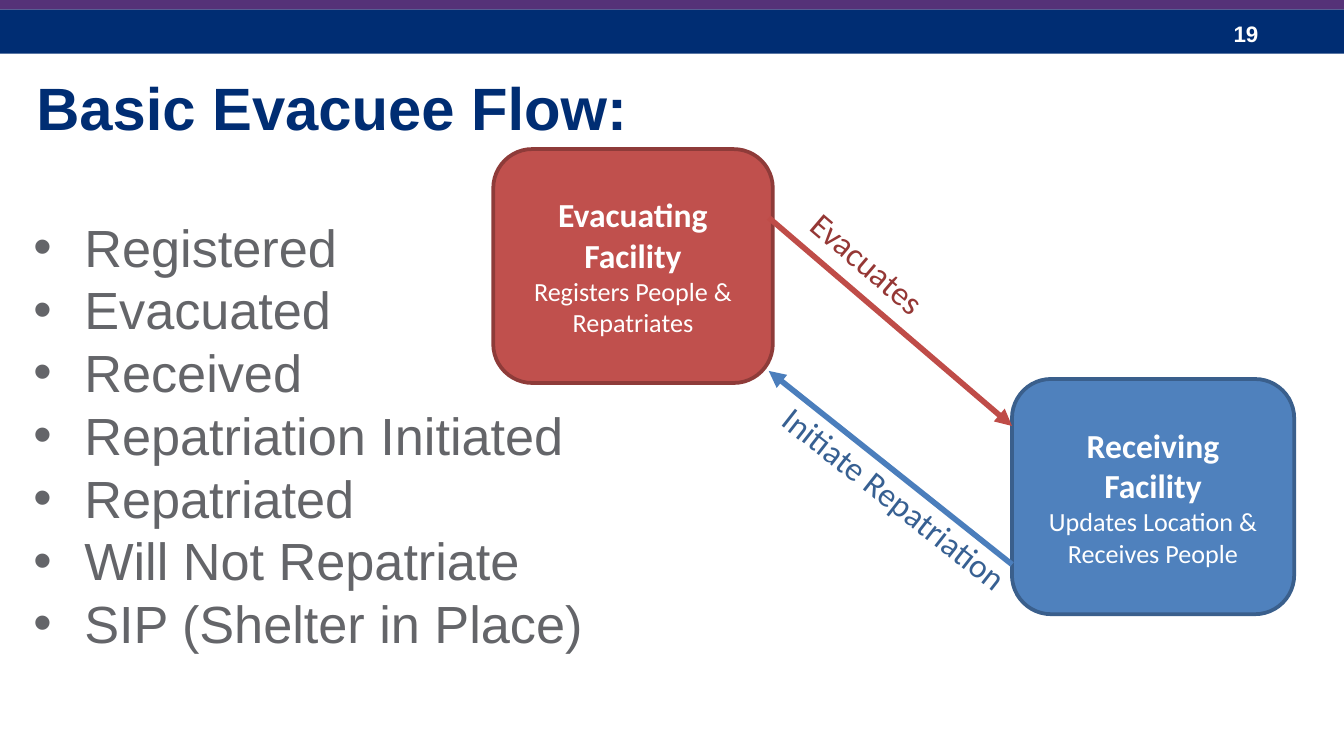
from dataclasses import dataclass

import pptx
import pptx.dml.color
import pptx.enum.shapes
import pptx.enum.text
import pptx.oxml.ns
import pptx.util
from lxml import etree

Inches = pptx.util.Inches
Pt = pptx.util.Pt
RGB = pptx.dml.color.RGBColor
Shape = pptx.enum.shapes.MSO_SHAPE
Align = pptx.enum.text.PP_ALIGN
Anchor = pptx.enum.text.MSO_ANCHOR
qn = pptx.oxml.ns.qn

NAVY = RGB(0x00, 0x2D, 0x73)
PURPLE = RGB(0x55, 0x32, 0x78)
GRAY = RGB(0x64, 0x65, 0x69)
WHITE = RGB(0xFF, 0xFF, 0xFF)
RED = RGB(0xC0, 0x50, 0x4D)
RED_EDGE = RGB(0x8E, 0x3B, 0x39)
RED_LINE = RGB(0xBF, 0x4C, 0x48)
RED_TEXT = RGB(0x95, 0x37, 0x35)
BLUE = RGB(0x4F, 0x81, 0xBD)
BLUE_EDGE = RGB(0x3A, 0x5F, 0x8C)
BLUE_LINE = RGB(0x4B, 0x7E, 0xBC)
BLUE_TEXT = RGB(0x37, 0x60, 0x92)

Box = tuple[float, float, float, float]
Point = tuple[float, float]


@dataclass
class Place:
    box: Box
    name: list[str]
    role: str
    fill: RGB
    edge: RGB


@dataclass
class Move:
    start: Point
    end: Point
    color: RGB
    label: str
    box: Box
    turn: float
    ink: RGB


STATES = [
    "Registered", "Evacuated", "Received", "Repatriation Initiated",
    "Repatriated", "Will Not Repatriate", "SIP (Shelter in Place)",
]
PLACES = [
    Place((3.67, 1.11, 2.08, 1.74), ["Evacuating", "Facility"],
          "Registers People & Repatriates", RED, RED_EDGE),
    Place((7.53, 2.82, 2.1, 1.75), ["Receiving Facility"],
          "Updates Location & Receives People", BLUE, BLUE_EDGE),
]
MOVES = [
    Move((5.72, 1.62), (7.53, 3.17), RED_LINE, "Evacuates",
         (5.83, 1.83, 1.43, 0.4), 40.5, RED_TEXT),
    Move((7.53, 4.2), (5.72, 2.76), BLUE_LINE, "Initiate Repatriation",
         (5.53, 3.56, 2.39, 0.4), 38.1, BLUE_TEXT),
]


def style(font, face: str, size: float, color: RGB, bold: bool = False) -> None:
    font.name, font.size, font.bold = face, Pt(size), bold
    font.color.rgb = color


def add_text(slide, box: Box, lines: list[str]):
    shape = slide.shapes.add_textbox(*map(Inches, box))
    frame = shape.text_frame
    frame.word_wrap = True
    frame.text = "\n".join(lines)
    return shape


def add_block(slide, kind, box: Box, fill: RGB):
    shape = slide.shapes.add_shape(kind, *map(Inches, box))
    shape.shadow.inherit = False
    shape.fill.solid()
    shape.fill.fore_color.rgb = fill
    shape.line.fill.background()
    return shape


def add_title(slide, text: str) -> None:
    title = slide.shapes.title
    title.left, title.top, title.width, title.height = map(
        Inches, (0.17, 0.48, 9.5, 1.18))
    frame = title.text_frame
    frame.text = text
    frame.vertical_anchor = Anchor.TOP
    para = frame.paragraphs[0]
    para.alignment = Align.LEFT
    style(para.font, "Arial", 32, NAVY, True)


def add_list(slide, box: Box, items: list[str]) -> None:
    frame = add_text(slide, box, items).text_frame
    for para in frame.paragraphs:
        props = para._p.get_or_add_pPr()
        props.set("marL", str(Inches(0.38)))
        props.set("indent", str(-Inches(0.38)))
        etree.SubElement(props, qn("a:buFont")).set("typeface", "Arial")
        etree.SubElement(props, qn("a:buChar")).set("char", "•")
        style(para.font, "Arial", 28, GRAY)


def add_place(slide, place: Place) -> None:
    shape = add_block(slide, Shape.ROUNDED_RECTANGLE, place.box, place.fill)
    shape.line.color.rgb = place.edge
    shape.line.width = Pt(2)
    frame = shape.text_frame
    frame.word_wrap = True
    frame.vertical_anchor = Anchor.MIDDLE
    frame.text = "\n".join(place.name + [place.role])
    for i, para in enumerate(frame.paragraphs):
        head = i < len(place.name)
        para.alignment = Align.CENTER
        style(para.font, "Calibri", 18 if head else 14, WHITE, head)


def add_move(slide, move: Move) -> None:
    line = slide.shapes.add_connector(
        pptx.enum.shapes.MSO_CONNECTOR.STRAIGHT,
        *map(Inches, move.start + move.end))
    line.line.color.rgb = move.color
    line.line.width = Pt(3)
    tail = etree.SubElement(line.line._get_or_add_ln(), qn("a:tailEnd"))
    tail.set("type", "triangle")
    etree.SubElement(line._element.spPr, qn("a:effectLst"))

    label = add_text(slide, move.box, [move.label])
    label.rotation = move.turn
    style(label.text_frame.paragraphs[0].font, "Calibri", 18, move.ink)


def main() -> None:
    # Widescreen page, 16 by 9
    deck = pptx.Presentation()
    deck.slide_width = Inches(10)
    deck.slide_height = deck.slide_width * 9 // 16
    slide = deck.slides.add_slide(deck.slide_layouts[5])

    # Header bands and page number
    add_block(slide, Shape.RECTANGLE, (0, 0.07, 10, 0.33), NAVY)
    add_block(slide, Shape.RECTANGLE, (0, -0.02, 10, 0.09), PURPLE)
    page = add_text(slide, (9.08, 0.1, 0.75, 0.3), ["19"])
    style(page.text_frame.paragraphs[0].font, "Arial", 12, WHITE, True)

    # Title and evacuee states
    add_title(slide, "Basic Evacuee Flow:")
    add_list(slide, (0.15, 1.55, 4.33, 3.7), STATES)

    # Facilities and the moves between them
    for place in PLACES:
        add_place(slide, place)
    for move in MOVES:
        add_move(slide, move)

    deck.save("out.pptx")


if __name__ == "__main__":
    main()
